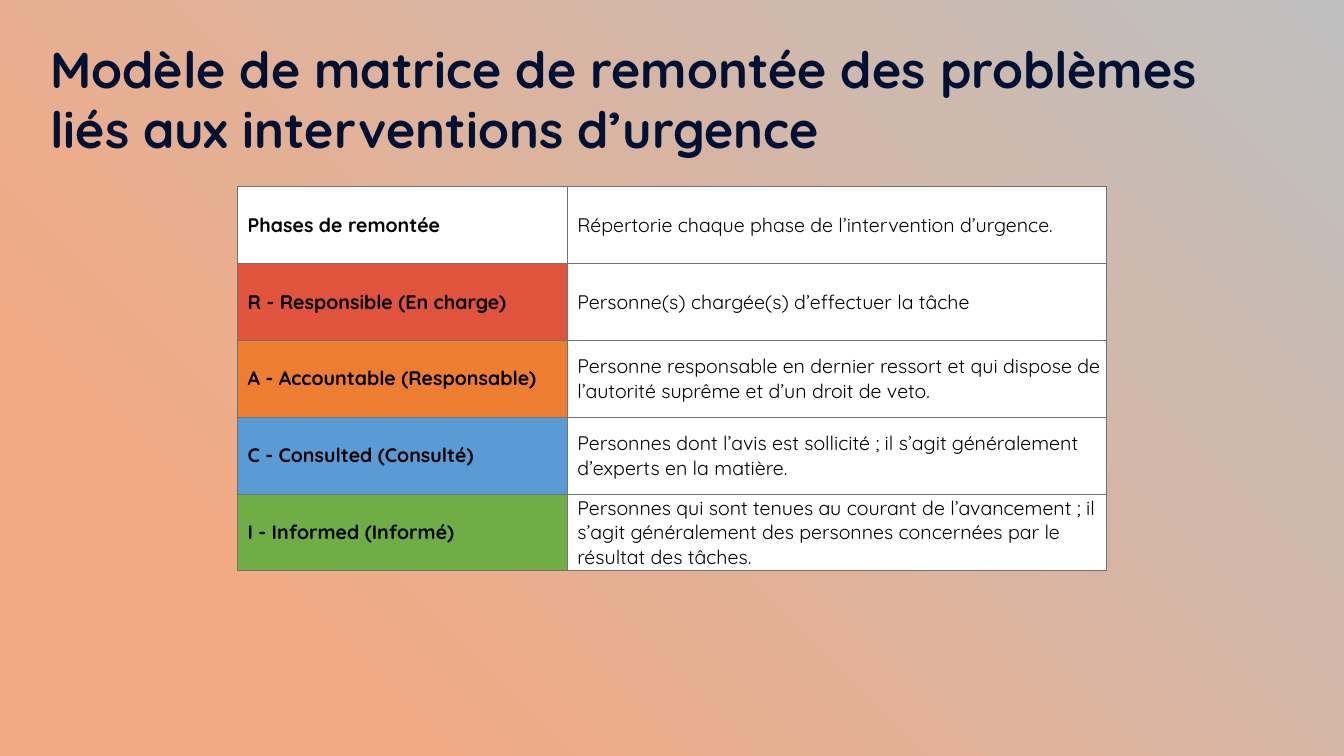
"""Build the slide with the escalation matrix template for emergency response."""
from dataclasses import dataclass

from lxml.etree import SubElement
from pptx import Presentation
from pptx.dml.color import RGBColor
from pptx.enum.text import MSO_ANCHOR, MSO_AUTO_SIZE, PP_ALIGN
from pptx.oxml import parse_xml
from pptx.oxml.ns import nsdecls, qn
from pptx.util import Cm, Pt


@dataclass(frozen=True)
class Theme:
    font: str = "Quicksand"
    title_size: int = 36
    table_size: int = 14
    border_width: float = 0.5
    title_color: str = "011033"
    text_color: str = "000000"
    border_color: str = "737373"
    white: str = "FFFFFF"
    responsible: str = "E0533C"
    accountable: str = "ED7D31"
    consulted: str = "5B9BD5"
    informed: str = "70AD47"
    background: tuple = ((0.19, "F2AA84"), (1.0, "BFBFBF"))


class SlideBuilder:
    def __init__(self, presentation, theme):
        self.theme = theme
        self.slide = presentation.slides.add_slide(presentation.slide_layouts[5])

    def add_background(self):
        fill = self.slide.background.fill
        fill.gradient()
        for stop, (position, color) in zip(fill.gradient_stops, self.theme.background):
            stop.position = position
            stop.color.rgb = RGBColor.from_string(color)
        gradient = self.slide.element.find(".//" + qn("a:gradFill"))
        gradient.replace(gradient.find(qn("a:lin")), parse_xml(
            f'<a:path {nsdecls("a")} path="circle">'
            '<a:fillToRect t="100000" r="100000"/></a:path>'))
        for tile in gradient.findall(qn("a:tileRect")):
            gradient.remove(tile)
        SubElement(gradient, qn("a:tileRect"), l="-100000", b="-100000")

    def format_text(self, text_frame, size, color, bold):
        for paragraph in text_frame.paragraphs:
            paragraph.alignment = PP_ALIGN.LEFT
            for run in paragraph.runs:
                run.font.name = self.theme.font
                run.font.size = Pt(size)
                run.font.bold = bold
                run.font.color.rgb = RGBColor.from_string(color)

    def add_title(self, text, left, top, width, height):
        title = self.slide.shapes.title
        title.left, title.top, title.width, title.height = left, top, width, height
        text_frame = title.text_frame
        text_frame.text = text
        text_frame.word_wrap = True
        text_frame.auto_size = MSO_AUTO_SIZE.NONE
        text_frame.vertical_anchor = MSO_ANCHOR.TOP
        text_frame.margin_left = text_frame.margin_right = Cm(0.25)
        text_frame.margin_top = text_frame.margin_bottom = Cm(0.25)
        self.format_text(text_frame, self.theme.title_size, self.theme.title_color, True)

    def add_borders(self, cell):
        properties = cell._tc.get_or_add_tcPr()
        for index, side in enumerate(("lnL", "lnR", "lnT", "lnB")):
            properties.insert(index, parse_xml(
                f'<a:{side} {nsdecls("a")} w="{Pt(self.theme.border_width)}"><a:solidFill>'
                f'<a:srgbClr val="{self.theme.border_color}"/></a:solidFill></a:{side}>'))

    def fill_cell(self, cell, text, color, bold):
        cell.text_frame.text = text
        cell.vertical_anchor = MSO_ANCHOR.MIDDLE
        cell.margin_left = Cm(0.25)
        cell.margin_right = cell.margin_top = cell.margin_bottom = 0
        cell.fill.solid()
        cell.fill.fore_color.rgb = RGBColor.from_string(color)
        self.format_text(cell.text_frame, self.theme.table_size, self.theme.text_color, bold)
        self.add_borders(cell)

    def add_matrix(self, rows, left, top, column_widths, height):
        table = self.slide.shapes.add_table(
            len(rows), len(column_widths), left, top, sum(column_widths), height).table
        table.first_row = table.horz_banding = False
        for column, width in zip(table.columns, column_widths):
            column.width = width
        for index, (label, description, color) in enumerate(rows):
            self.fill_cell(table.cell(index, 0), label, color, True)
            self.fill_cell(table.cell(index, 1), description, self.theme.white, False)


def main():
    theme = Theme()
    presentation = Presentation()
    presentation.slide_width, presentation.slide_height = Cm(33.87), Cm(19.05)
    builder = SlideBuilder(presentation, theme)
    builder.add_background()
    builder.add_title(
        "Modèle de matrice de remontée des problèmes liés aux interventions d’urgence",
        Cm(1.02), Cm(0.71), Cm(30.73), Cm(3.7))
    phases = [
        ("Phases de remontée",
         "Répertorie chaque phase de l’intervention d’urgence.", theme.white),
        ("R - Responsible (En charge)",
         "Personne(s) chargée(s) d’effectuer la tâche", theme.responsible),
        ("A - Accountable (Responsable)",
         "Personne responsable en dernier ressort et qui dispose de l’autorité suprême "
         "et d’un droit de veto.", theme.accountable),
        ("C - Consulted (Consulté)",
         "Personnes dont l’avis est sollicité ; il s’agit généralement d’experts "
         "en la matière.", theme.consulted),
        ("I - Informed (Informé)",
         "Personnes qui sont tenues au courant de l’avancement ; il s’agit généralement "
         "des personnes concernées par le résultat des tâches.", theme.informed),
    ]
    builder.add_matrix(phases, Cm(5.99), Cm(4.7), (Cm(8.31), Cm(13.59)), Cm(9.68))
    presentation.save("out.pptx")


if __name__ == "__main__":
    main()
